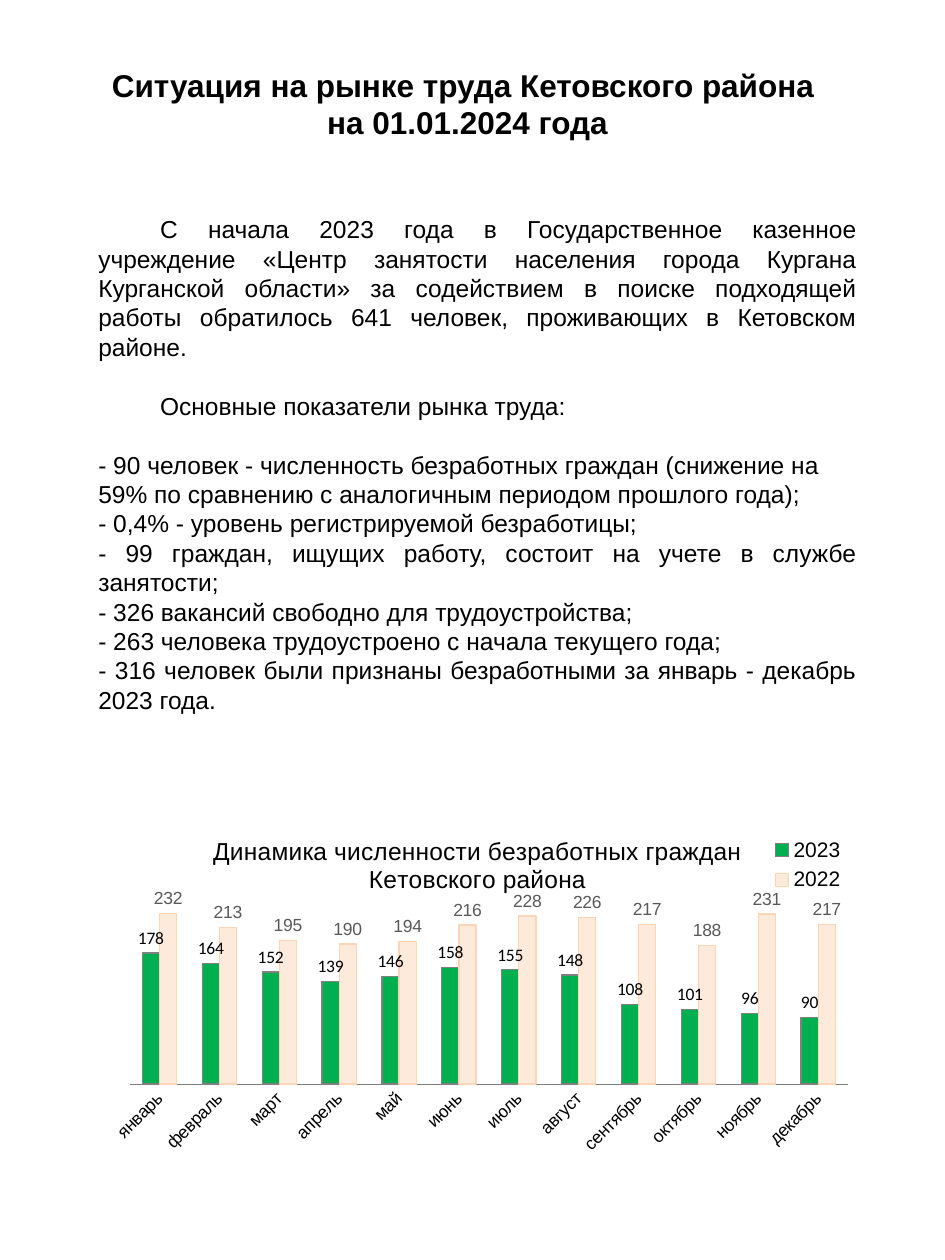
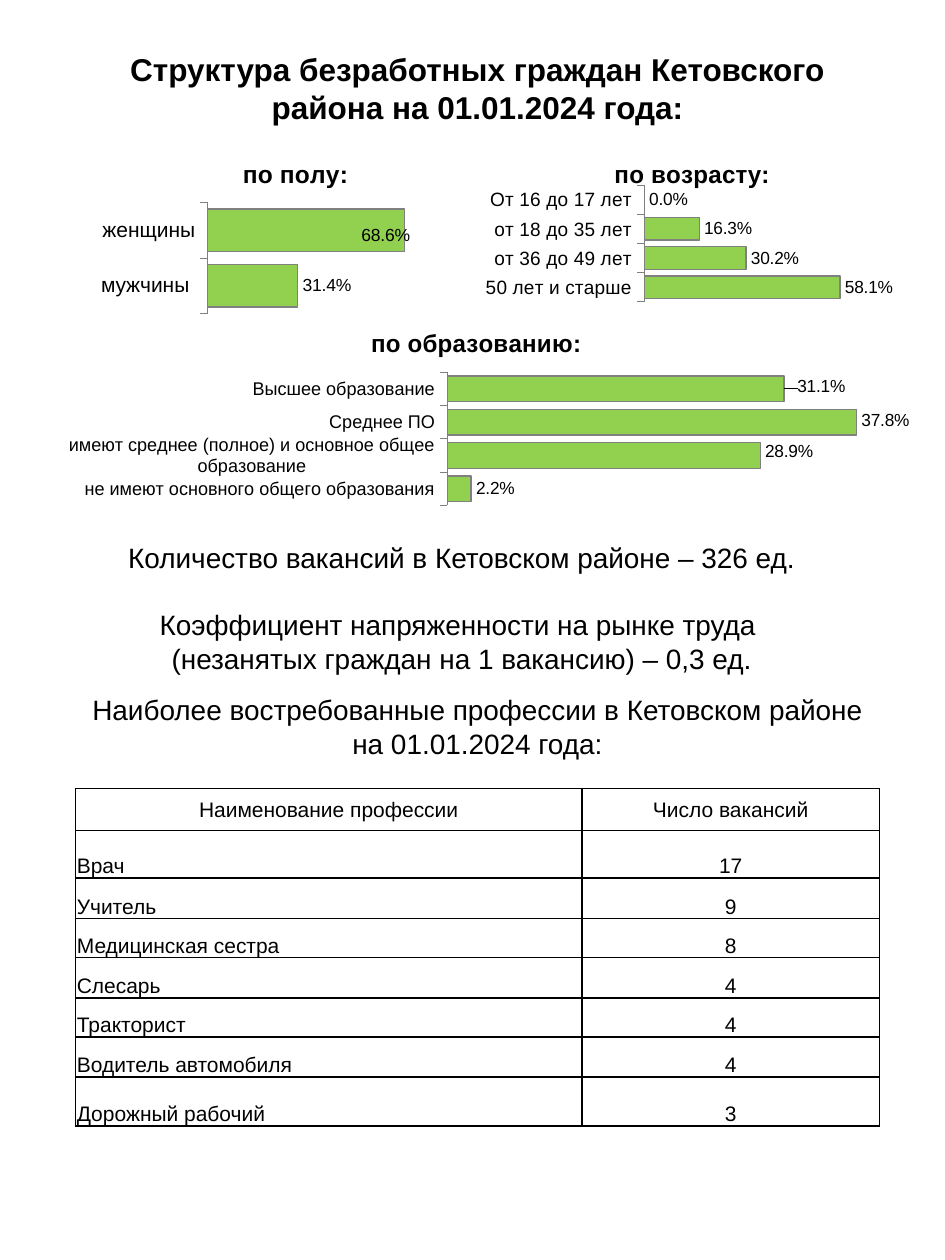
from lxml import etree
from pptx import Presentation
from pptx.chart.data import CategoryChartData
from pptx.dml.color import RGBColor
from pptx.enum.chart import XL_CHART_TYPE, XL_LABEL_POSITION, XL_LEGEND_POSITION, XL_TICK_MARK
from pptx.enum.text import MSO_ANCHOR, MSO_AUTO_SIZE, PP_ALIGN
from pptx.oxml import parse_xml
from pptx.oxml.ns import nsdecls, qn
from pptx.util import Inches, Pt

CENTER, LEFT, JUSTIFY = PP_ALIGN.CENTER, PP_ALIGN.LEFT, PP_ALIGN.JUSTIFY
TOP, MIDDLE, BOTTOM = MSO_ANCHOR.TOP, MSO_ANCHOR.MIDDLE, MSO_ANCHOR.BOTTOM
COLUMNS, BARS = XL_CHART_TYPE.COLUMN_CLUSTERED, XL_CHART_TYPE.BAR_CLUSTERED
OUTSIDE_END = XL_LABEL_POSITION.OUTSIDE_END
TICK_NONE, TICK_OUT = XL_TICK_MARK.NONE, XL_TICK_MARK.OUTSIDE

BLACK, WHITE, GRAY, DARK_GRAY = "000000", "FFFFFF", "808080", "595959"
GREEN, LIME, PEACH, PEACH_EDGE = "00B050", "92D050", "FDEADA", "FCD5B5"
FONT, CHART_FONT = "Arial", "Calibri"
TITLE_SIZE, BODY_SIZE, NOTE_SIZE, TABLE_SIZE = 18, 14, 16, 12
PERCENT, WHOLE = "0.0%", "#,##0"
LEADER_LINES_OFF = (
    f'<c:extLst {nsdecls("c")}><c:ext uri="{{CE6537A1-D6FC-4f65-9D91-7224C49458BB}}" '
    'xmlns:c15="http://schemas.microsoft.com/office/drawing/2012/chart">'
    '<c15:showLeaderLines val="0"/></c:ext></c:extLst>')

INDENT = 0.49
BLANK_LINE = 16.8
OVERVIEW = [
    ("С начала 2023 года в Государственное казенное учреждение «Центр занятости населения "
     "города Кургана Курганской области» за содействием в поиске подходящей работы обратилось "
     "641 человек, проживающих в Кетовском районе.", JUSTIFY, INDENT, BLANK_LINE),
    ("Основные показатели рынка труда:", JUSTIFY, INDENT, BLANK_LINE),
    ("- 90 человек - численность безработных граждан (снижение на "
     "59% по сравнению с аналогичным периодом прошлого года);", LEFT, 0, 0),
    ("- 0,4% - уровень регистрируемой безработицы;", JUSTIFY, 0, 0),
    ("- 99 граждан, ищущих работу, состоит на учете в службе занятости;", JUSTIFY, 0, 0),
    ("- 326 вакансий свободно для трудоустройства;", JUSTIFY, 0, 0),
    ("- 263 человека трудоустроено с начала текущего года;", JUSTIFY, 0, 0),
    ("- 316 человек были признаны безработными за январь - декабрь 2023 года.", JUSTIFY, 0, 0),
]
MONTHS = ["январь", "февраль", "март", "апрель", "май", "июнь", "июль", "август",
          "сентябрь", "октябрь", "ноябрь", "декабрь"]
UNEMPLOYED = {
    "2023": [178, 164, 152, 139, 146, 158, 155, 148, 108, 101, 96, 90],
    "2022": [232, 213, 195, 190, 194, 216, 228, 226, 217, 188, 231, 217],
}
VACANCIES = [
    ("Наименование профессии", "Число вакансий"),
    ("Врач", "17"), ("Учитель", "9"), ("Медицинская сестра", "8"), ("Слесарь", "4"),
    ("Тракторист", "4"), ("Водитель автомобиля", "4"), ("Дорожный рабочий", "3"),
]
ROW_HEIGHTS = [0.33, 0.38, 0.32, 0.31, 0.32, 0.31, 0.32, 0.39]


def rgb(code):
    """Turn a hex string into a colour."""
    return RGBColor.from_string(code)


def style_font(font, size, color=BLACK, name=FONT, bold=False):
    """Set the size, colour, face and weight of a font."""
    font.size, font.name, font.bold = Pt(size), name, bold
    font.color.rgb = rgb(color)


def write(paragraph, text, size=BODY_SIZE, bold=False, color=BLACK, align=CENTER, after=0):
    """Put formatted text into a paragraph."""
    paragraph.text = text
    paragraph.alignment = align
    paragraph.space_before, paragraph.space_after = Pt(0), Pt(after)
    for run in paragraph.runs:
        style_font(run.font, size, color, bold=bold)


def place(shape, box):
    """Move a shape to a box given in inches."""
    shape.left, shape.top, shape.width, shape.height = map(Inches, box)


def set_frame(frame, anchor=TOP):
    """Make a text frame wrap at a fixed size."""
    frame.word_wrap = True
    frame.auto_size = MSO_AUTO_SIZE.NONE
    frame.vertical_anchor = anchor


def add_title(slide, box, text):
    """Fill the title placeholder."""
    place(slide.shapes.title, box)
    frame = slide.shapes.title.text_frame
    set_frame(frame)
    write(frame.paragraphs[0], text, size=TITLE_SIZE, bold=True)


def add_overview(slide, box):
    """Fill the body placeholder with the labour market figures."""
    body = slide.placeholders[1]
    place(body, box)
    frame = body.text_frame
    set_frame(frame)
    for number, (text, align, indent, after) in enumerate(OVERVIEW):
        paragraph = frame.add_paragraph() if number else frame.paragraphs[0]
        write(paragraph, text, align=align, after=after)
        properties = paragraph._p.get_or_add_pPr()
        properties.set("marL", "0")
        properties.set("indent", str(Inches(indent)))
        etree.SubElement(properties, qn("a:buNone"))


def add_note(slide, box, lines):
    """Add centred lines, each with the space that follows it."""
    frame = slide.shapes.add_textbox(*map(Inches, box)).text_frame
    set_frame(frame)
    for number, (text, after) in enumerate(lines):
        paragraph = frame.add_paragraph() if number else frame.paragraphs[0]
        write(paragraph, text, size=NOTE_SIZE, after=after)


def set_layout(parent, index, sizes, edge=True, inner=False):
    """Give a chart part a manual position in fractions of the chart."""
    for old in parent.findall(qn("c:layout")):
        parent.remove(old)
    settings = [("layoutTarget", "inner")] if inner else []
    settings += [("xMode", "edge"), ("yMode", "edge")] if edge else []
    settings += zip("xywh", sizes)
    tags = "".join(f'<c:{tag} val="{value}"/>' for tag, value in settings)
    parent.insert(index, parse_xml(
        f'<c:layout {nsdecls("c")}><c:manualLayout>{tags}</c:manualLayout></c:layout>'))


def add_bar_chart(slide, box, kind, title, categories, series, plot_area, title_at, maximum,
                  gap, number_format, axis_size, ticks, title_bold):
    """Add a bar or column chart without a visible value axis."""
    data = CategoryChartData(number_format=number_format)
    data.categories = categories
    for name, values in series.items():
        data.add_series(name, values)
    chart = slide.shapes.add_chart(kind, *map(Inches, box), data).chart
    style_font(chart.font, 12, name=CHART_FONT)
    chart.has_legend = False
    chart.has_title = True
    write(chart.chart_title.text_frame.paragraphs[0], title, bold=title_bold)
    chart.chart_title.include_in_layout = False
    set_layout(chart.chart_title._element, 1, title_at)
    set_layout(chart._chartSpace.xpath(".//c:plotArea")[0], 0, plot_area, inner=True)

    values_axis = chart.value_axis
    values_axis.minimum_scale, values_axis.maximum_scale = 0, maximum
    values_axis.has_major_gridlines = False
    values_axis.visible = False
    names_axis = chart.category_axis
    names_axis.major_tick_mark = ticks
    names_axis.format.line.color.rgb = rgb(GRAY)
    names_axis.format.line.width = Pt(0.5)
    style_font(names_axis.tick_labels.font, axis_size)

    chart.plots[0].gap_width = gap
    chart.plots[0].vary_by_categories = False
    return chart


def style_series(series, fill, edge, number_format, label_color=BLACK, label_font=FONT):
    """Colour a series and label its values."""
    series.format.fill.solid()
    series.format.fill.fore_color.rgb = rgb(fill)
    series.format.line.color.rgb = rgb(edge)
    series.format.line.width = Pt(0.75)
    labels = series.data_labels
    labels.show_value = True
    labels.number_format, labels.number_format_is_linked = number_format, False
    labels.position = OUTSIDE_END
    style_font(labels.font, 10, label_color, label_font)


def add_dynamics_chart(slide, box):
    """Add the monthly comparison of two years."""
    chart = add_bar_chart(
        slide, box, COLUMNS, "Динамика численности безработных граждан Кетовского района",
        MONTHS, UNEMPLOYED, (0.056, 0.224, 0.917, 0.509), (0.157, 0.034), 250,
        gap=150, number_format=WHOLE, axis_size=10, ticks=TICK_NONE, title_bold=False)
    current, previous = chart.series
    style_series(current, GREEN, GRAY, WHOLE, label_font=CHART_FONT)
    style_series(previous, PEACH, PEACH_EDGE, WHOLE, label_color=DARK_GRAY)
    chart.category_axis._element.xpath("./c:txPr/a:bodyPr")[0].set("rot", "-2700000")
    chart.has_legend = True
    chart.legend.position = XL_LEGEND_POSITION.RIGHT
    chart.legend.include_in_layout = False
    style_font(chart.legend.font, 12)
    set_layout(chart.legend._element, 1, (0.862, 0.034, 0.12, 0.186))


def add_share_chart(slide, box, title, shares, plot_area, title_at, maximum,
                    axis_size=12, reverse=True, label_shifts=None):
    """Add horizontal bars with the shares of the unemployed."""
    chart = add_bar_chart(
        slide, box, BARS, title, list(shares), {title: list(shares.values())},
        plot_area, title_at, maximum, gap=30, number_format=PERCENT,
        axis_size=axis_size, ticks=TICK_OUT, title_bold=True)
    chart.category_axis.reverse_order = reverse
    series = chart.series[0]
    style_series(series, LIME, GRAY, PERCENT)
    for index, shift in (label_shifts or {}).items():
        label = series.points[index].data_label
        style_font(label.font, 10)
        label.position = OUTSIDE_END
        element = series._element.xpath(f"./c:dLbls/c:dLbl[c:idx/@val={index}]")[0]
        set_layout(element, 1, shift, edge=False)
    series.data_labels._element.append(parse_xml(LEADER_LINES_OFF))


def style_cell(cell, text, align, anchor):
    """Write a table cell with a thin black border."""
    cell.margin_left = cell.margin_right = cell.margin_top = Inches(0.01)
    cell.margin_bottom = 0
    cell.vertical_anchor = anchor
    cell.fill.solid()
    cell.fill.fore_color.rgb = rgb(WHITE)
    write(cell.text_frame.paragraphs[0], text, size=TABLE_SIZE, align=align)
    for position, side in enumerate("LRTB"):
        cell._tc.get_or_add_tcPr().insert(position, parse_xml(
            f'<a:ln{side} {nsdecls("a")} w="{Pt(1)}"><a:solidFill>'
            f'<a:srgbClr val="{BLACK}"/></a:solidFill></a:ln{side}>'))


def add_vacancy_table(slide, box):
    """Add the table of professions in demand."""
    table = slide.shapes.add_table(len(VACANCIES), 2, *map(Inches, box)).table
    table.first_row = table.horz_banding = False
    for column, width in zip(table.columns, (4.02, 2.36)):
        column.width = Inches(width)
    for row, height in zip(table.rows, ROW_HEIGHTS):
        row.height = Inches(height)
    for number, (profession, count) in enumerate(VACANCIES):
        anchor = BOTTOM if number else MIDDLE
        style_cell(table.cell(number, 0), profession, LEFT if number else CENTER, anchor)
        style_cell(table.cell(number, 1), count, CENTER, anchor)


def build_market_slide(deck):
    """Build the slide on the state of the labour market."""
    slide = deck.slides.add_slide(deck.slide_layouts[1])
    add_title(slide, (0.52, 0.47, 6.38, 0.71),
              "Ситуация на рынке труда Кетовского района \vна 01.01.2024 года")
    add_overview(slide, (0.68, 1.65, 6.22, 4.34))
    add_dynamics_chart(slide, (0.68, 6.5, 6.22, 2.87))


def build_structure_slide(deck):
    """Build the slide on the structure of the unemployed."""
    slide = deck.slides.add_slide(deck.slide_layouts[5])
    add_title(slide, (0.68, 0.35, 6.22, 0.71),
              "Структура безработных граждан Кетовского района на 01.01.2024 года:")
    add_share_chart(
        slide, (0.68, 1.22, 2.92, 1.34), "по полу:", {"мужчины ": 0.314, "женщины": 0.686},
        (0.332, 0.29, 0.623, 0.656), (0.415, 0), 0.8,
        reverse=False, label_shifts={1: (-0.13, 0.03)})
    add_share_chart(
        slide, (3.51, 1.22, 3.58, 1.18), "по возрасту:",
        {"От 16 до 17 лет": 0, "от 18 до 35 лет": 0.163,
         "от 36 до 49 лет": 0.302, " 50 лет и старше": 0.581},
        (0.454, 0.212, 0.53, 0.788), (0.377, 0), 0.7, axis_size=11)
    add_share_chart(
        slide, (0.44, 2.56, 6.78, 1.5), "по образованию:",
        {"Высшее образование": 0.311, "Среднее ПО": 0.378,
         "имеют среднее (полное) и основное общее образование": 0.289,
         "не имеют основного общего образования": 0.022},
        (0.466, 0.263, 0.515, 0.705), (0.37, 0), 0.4, axis_size=10.5,
        label_shifts={0: (0.01, -0.01), 1: (0, -0.01), 2: (0, -0.02)})
    add_note(slide, (0.41, 4.24, 6.51, 1.18), [
        ("Количество вакансий в Кетовском районе – 326 ед.", 19.2),
        ("Коэффициент напряженности на рынке труда ", 0),
        ("(незанятых граждан на 1 вакансию) – 0,3 ед.", 0)])
    add_note(slide, (0.6, 5.45, 6.38, 0.64), [
        ("Наиболее востребованные профессии в Кетовском районе на 01.01.2024 года:", 0)])
    add_vacancy_table(slide, (0.6, 6.26, 6.38, 2.68))


def main():
    """Build both slides and save them."""
    deck = Presentation()
    deck.slide_width, deck.slide_height = Inches(7.5), Inches(10)
    build_market_slide(deck)
    build_structure_slide(deck)
    deck.save("out.pptx")


if __name__ == "__main__":
    main()
